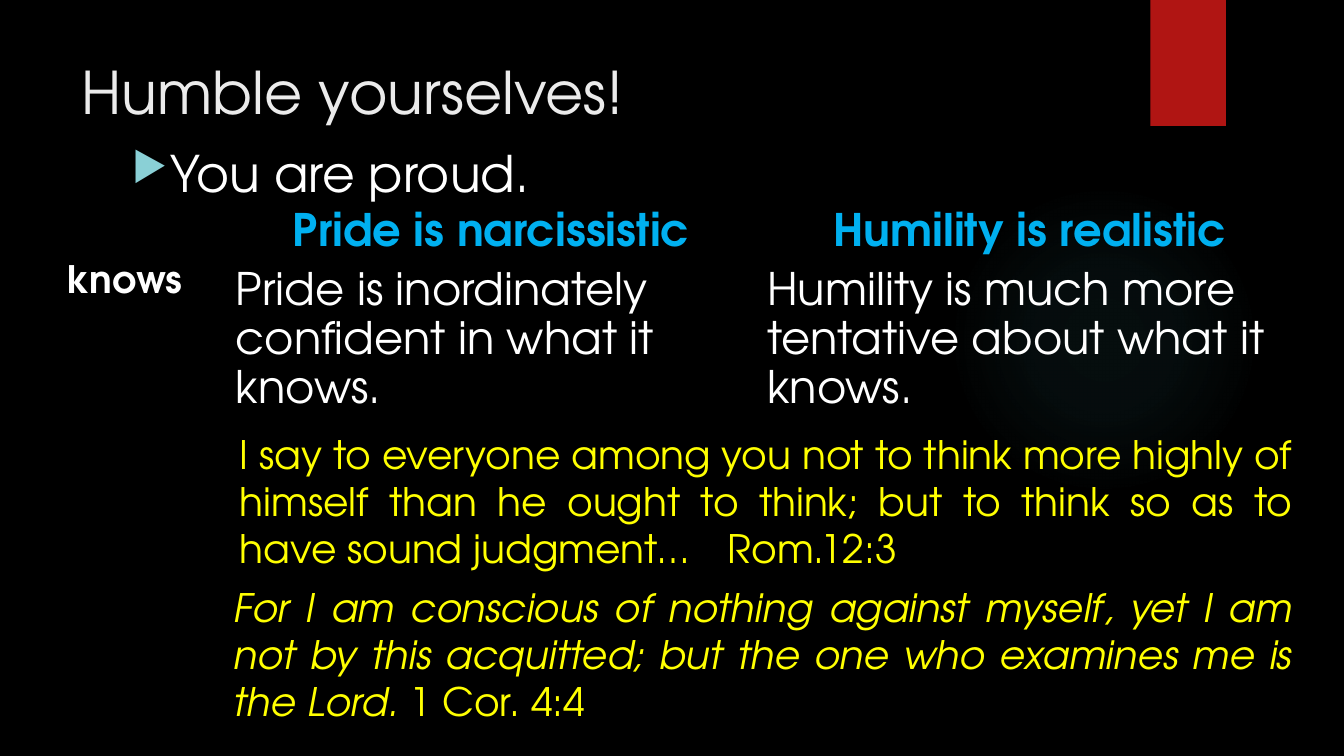
from dataclasses import dataclass

from lxml import etree
from pptx import Presentation
from pptx.dml.color import RGBColor
from pptx.enum import shapes, text
from pptx.oxml import parse_xml
from pptx.oxml.ns import nsdecls, qn
from pptx.util import Inches, Pt


@dataclass(frozen=True)
class Theme:
    font: str = "TeX Gyre Adventor"
    background: str = "000000"
    ribbon: str = "B01513"
    glow: str = "50B9C1"
    title: str = "EBEBEB"
    body: str = "FFFFFF"
    bullet: str = "8AD0D6"
    heading: str = "00B0F0"
    verse: str = "FFFF00"
    title_size: int = 42
    point_size: int = 36
    table_size: int = 32
    label_size: int = 27
    verse_size: int = 28
    table_leading: int = 35
    label_leading: int = 25


THEME = Theme()
NO_GRID_STYLE = "{2D5ABB26-0587-4C30-8999-92F81FD0307C}"


def style_runs(paragraph, size, color, bold=False):
    for run in paragraph.runs:
        run.font.name = THEME.font
        run.font.size = Pt(size)
        run.font.bold = bold
        run.font.color.rgb = RGBColor.from_string(color)


def add_text(slide, box, wording):
    """Add a wrapping text box and return its first paragraph."""
    frame = slide.shapes.add_textbox(*map(Inches, box)).text_frame
    frame.word_wrap = True
    frame.text = wording
    return frame.paragraphs[0]


def add_plain_shape(slide, kind, box):
    shape = slide.shapes.add_shape(kind, *map(Inches, box))
    shape.shadow.inherit = False
    shape.line.fill.background()
    return shape


def add_glow(slide, box):
    """Add a circle that fades out from its centre."""
    glow = add_plain_shape(slide, shapes.MSO_SHAPE.OVAL, box)
    stops = "".join(
        f'<a:gs pos="{place * 1000}"><a:srgbClr val="{THEME.glow}">'
        f'<a:alpha val="{opacity * 1000}"/></a:srgbClr></a:gs>'
        for place, opacity in ((0, 7), (36, 6), (69, 0), (100, 0)))
    gradient = parse_xml(
        f'<a:gradFill {nsdecls("a")}><a:gsLst>{stops}</a:gsLst><a:path path="circle">'
        '<a:fillToRect l="50000" t="50000" r="50000" b="50000"/></a:path></a:gradFill>')
    glow._element.spPr.find(qn("a:prstGeom")).addnext(gradient)


def add_ribbon(slide, box):
    ribbon = add_plain_shape(slide, shapes.MSO_SHAPE.RECTANGLE, box)
    ribbon.fill.solid()
    ribbon.fill.fore_color.rgb = RGBColor.from_string(THEME.ribbon)


def add_title(slide, box, wording):
    style_runs(add_text(slide, box, wording), THEME.title_size, THEME.title)


def add_point(slide, box, wording):
    """Add the main point with its triangular bullet."""
    point = add_text(slide, box, wording)
    point.line_spacing = 1.1
    properties = point._p.get_or_add_pPr()
    properties.set("marL", str(Inches(0.38)))
    properties.set("indent", str(-Inches(0.38)))
    color = etree.SubElement(properties, qn("a:buClr"))
    etree.SubElement(color, qn("a:srgbClr"), val=THEME.bullet)
    etree.SubElement(properties, qn("a:buSzPct"), val="80000")
    etree.SubElement(properties, qn("a:buChar"), char="▶")
    style_runs(point, THEME.point_size, THEME.body)


def fill_cell(cell, wording, size, leading, color, bold, centred):
    cell.text = wording
    paragraph = cell.text_frame.paragraphs[0]
    paragraph.alignment = text.PP_ALIGN.CENTER if centred else text.PP_ALIGN.LEFT
    paragraph.line_spacing = Pt(leading)
    style_runs(paragraph, size, color, bold)


def add_comparison(slide, box, label, columns):
    """Add the borderless table: a row label, then (heading, statement) columns."""
    table = slide.shapes.add_table(2, 3, *map(Inches, box)).table
    table.first_row = table.horz_banding = False
    table._tbl.tblPr.find(qn("a:tableStyleId")).text = NO_GRID_STYLE
    for column, width in zip(table.columns, (2, 5.27, 5.41)):
        column.width = Inches(width)
    for row, height in zip(table.rows, (0.59, box[3] - 0.59)):
        row.height = Inches(height)
    for cell in table.iter_cells():
        cell.fill.background()
    fill_cell(table.cell(1, 0), label, THEME.label_size, THEME.label_leading,
              THEME.body, bold=True, centred=True)
    for index, (heading, statement) in enumerate(columns, start=1):
        fill_cell(table.cell(0, index), heading, THEME.table_size,
                  THEME.table_leading, THEME.heading, bold=True, centred=True)
        fill_cell(table.cell(1, index), statement, THEME.table_size,
                  THEME.table_leading, THEME.body, bold=False, centred=False)


def add_verse(slide, box, quotation, reference, italic=False, margin=0, reference_tab=None):
    verse = add_text(slide, box, quotation)
    verse.alignment = text.PP_ALIGN.JUSTIFY
    properties = verse._p.get_or_add_pPr()
    properties.set("marL", str(Inches(margin)))
    if reference_tab:
        tabs = etree.SubElement(properties, qn("a:tabLst"))
        etree.SubElement(tabs, qn("a:tab"), pos=str(Inches(reference_tab)), algn="l")
    verse.runs[0].font.italic = italic
    verse.add_run().text = ("\t" if reference_tab else " ") + reference
    style_runs(verse, THEME.verse_size, THEME.verse)


def build_humility_slide(presentation):
    slide = presentation.slides.add_slide(presentation.slide_layouts[6])
    slide.background.fill.solid()
    slide.background.fill.fore_color.rgb = RGBColor.from_string(THEME.background)
    add_glow(slide, (9.41, 1.83, 3.08, 3.08))
    add_ribbon(slide, (11.41, 0, 0.75, 1.25))
    add_title(slide, (0.71, 0.5, 10.29, 0.91), "Humble yourselves!")
    add_point(slide, (1.21, 1.3, 11.21, 5.79), "You are proud.")
    add_comparison(slide, (0.24, 1.99, 12.68, 2.19), "knows", (
        ("Pride is narcissistic", "Pride is inordinately confident in what it knows."),
        ("Humility is realistic", "Humility is much more tentative about what it knows.")))
    add_verse(slide, (2.22, 4.22, 10.7, 1.51),
              "I say to everyone among you not to think more highly of himself than he "
              "ought to think; but to think so as to have sound judgment…",
              "Rom.12:3", margin=0.06, reference_tab=4.84)
    add_verse(slide, (2.22, 5.74, 10.7, 1.51),
              "For I am conscious of nothing against myself, yet I am not by this "
              "acquitted; but the one who examines me is the Lord.",
              "1 Cor. 4:4", italic=True)


def main():
    presentation = Presentation()
    presentation.slide_width = Inches(13.33)
    presentation.slide_height = Inches(7.5)
    build_humility_slide(presentation)
    presentation.save("out.pptx")


if __name__ == "__main__":
    main()
